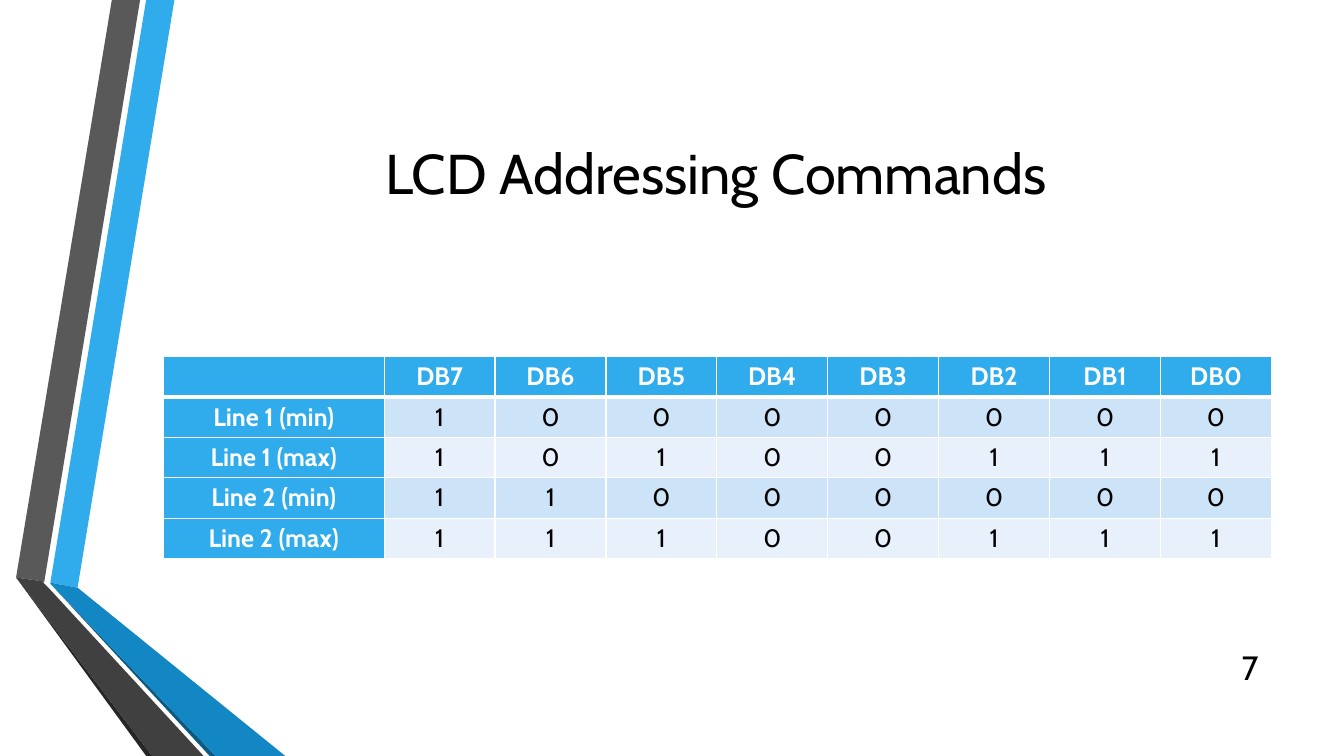
from dataclasses import dataclass

from lxml.etree import SubElement
from pptx import Presentation
from pptx.dml.color import RGBColor
from pptx.enum.text import MSO_ANCHOR, PP_ALIGN
from pptx.oxml.ns import qn
from pptx.slide import Slide
from pptx.table import _Cell
from pptx.text.text import TextFrame
from pptx.util import Inches, Pt

FONT = "Cabin"
COLORS = {
    "sky": "30ACEC", "blue": "1287C3", "navy": "0C5A82",
    "gray": "595959", "dark": "404040", "coal": "262626",
    "band": "CDE3F8", "pale": "E8F1FB", "white": "FFFFFF", "black": "000000",
}


@dataclass
class Ribbon:
    color: str
    points: list[tuple[float, float]]


@dataclass
class Row:
    label: str
    bits: str


RIBBONS = [
    Ribbon("sky", [(0.5, 5.78), (0.77, 5.83), (1.73, 0), (1.45, 0)]),
    Ribbon("gray", [(1.39, 0), (1.11, 0), (0.16, 5.73), (0.44, 5.77)]),
    Ribbon("coal", [(0.16, 5.73), (1.45, 7.5), (1.51, 7.5)]),
    Ribbon("navy", [(0.5, 5.79), (2.08, 7.5), (2.14, 7.5)]),
    Ribbon("blue", [(0.5, 5.79), (2.14, 7.5), (2.83, 7.5), (0.77, 5.83), (0.5, 5.78)]),
    Ribbon("dark", [(2.02, 7.5), (0.48, 5.83), (0.43, 5.78), (0.44, 5.77),
                    (0.16, 5.73), (1.51, 7.5)]),
]
ROWS = [
    Row("Line 1 (min)", "10000000"),
    Row("Line 1 (max)", "10100111"),
    Row("Line 2 (min)", "11000000"),
    Row("Line 2 (max)", "11100111"),
]


def rgb(name: str) -> RGBColor:
    return RGBColor.from_string(COLORS[name])


def write(frame: TextFrame, text: str, size: int, color: str,
          align: PP_ALIGN, bold: bool = False) -> None:
    frame.text = text
    line = frame.paragraphs[0]
    line.alignment = align
    line.font.name = FONT
    line.font.size = Pt(size)
    line.font.bold = bold
    line.font.color.rgb = rgb(color)


def draw_ribbon(slide: Slide, ribbon: Ribbon) -> None:
    points = [(Inches(x), Inches(y)) for x, y in ribbon.points]
    pen = slide.shapes.build_freeform(*points[0])
    pen.add_line_segments(points[1:], close=True)
    shape = pen.convert_to_shape()
    shape.shadow.inherit = False
    shape.fill.solid()
    shape.fill.fore_color.rgb = rgb(ribbon.color)
    shape.line.fill.background()


def add_edges(cell: _Cell, base: int) -> None:
    props = cell._tc.get_or_add_tcPr()
    for spot, (side, width) in enumerate([("L", 1), ("R", 1), ("T", 1), ("B", base)]):
        edge = SubElement(props, qn(f"a:ln{side}"), w=str(Pt(width)))
        fill = SubElement(edge, qn("a:solidFill"))
        SubElement(fill, qn("a:srgbClr"), val=COLORS["white"])
        props.insert(spot, edge)  # Borders come before the fill


def fill_cell(cell: _Cell, text: str, fill: str, head: bool, base: int) -> None:
    cell.fill.solid()
    cell.fill.fore_color.rgb = rgb(fill)
    cell.margin_left = cell.margin_right = Inches(0.07)
    cell.margin_top = cell.margin_bottom = 0
    write(cell.text_frame, text, 18, "white" if head else "black", PP_ALIGN.CENTER, head)
    cell.text_frame.paragraphs[0].line_spacing = 1.15
    add_edges(cell, base)


def draw_table(slide: Slide) -> None:
    grid = [["", *(f"DB{bit}" for bit in range(7, -1, -1))]]
    grid += [[row.label, *row.bits] for row in ROWS]
    table = slide.shapes.add_table(
        len(grid), len(grid[0]),
        Inches(1.62), Inches(3.54), Inches(10.96), Inches(2)).table
    for num, col in enumerate(table.columns):
        col.width = Inches(1.1 if num else 2.19)
    for r, texts in enumerate(grid):
        table.rows[r].height = Inches(0.4)
        for c, text in enumerate(texts):
            head = r == 0 or c == 0
            fill = "sky" if head else "band" if r % 2 else "pale"
            # The thick rule sits between the header and the first row
            fill_cell(table.cell(r, c), text, fill, head, 1 if r else 3)


def main() -> None:
    deck = Presentation()
    deck.slide_width, deck.slide_height = Inches(13.33), Inches(7.5)
    slide = deck.slides.add_slide(deck.slide_layouts[5])

    # Side ribbons
    for ribbon in RIBBONS:
        draw_ribbon(slide, ribbon)

    # Title
    title = slide.shapes.title
    title.left, title.top = Inches(1.62), Inches(0.75)
    title.width, title.height = Inches(10.96), Inches(1.92)
    title.text_frame.vertical_anchor = MSO_ANCHOR.MIDDLE
    write(title.text_frame, "LCD Addressing Commands", 40, "black", PP_ALIGN.CENTER)

    # Address table
    draw_table(slide)

    # Page number
    page = slide.shapes.add_textbox(Inches(11.98), Inches(6.42), Inches(0.6), Inches(0.4))
    page.text_frame.word_wrap = True
    page.text_frame.vertical_anchor = MSO_ANCHOR.MIDDLE
    write(page.text_frame, "7", 24, "black", PP_ALIGN.RIGHT)

    deck.save("out.pptx")


if __name__ == "__main__":
    main()
